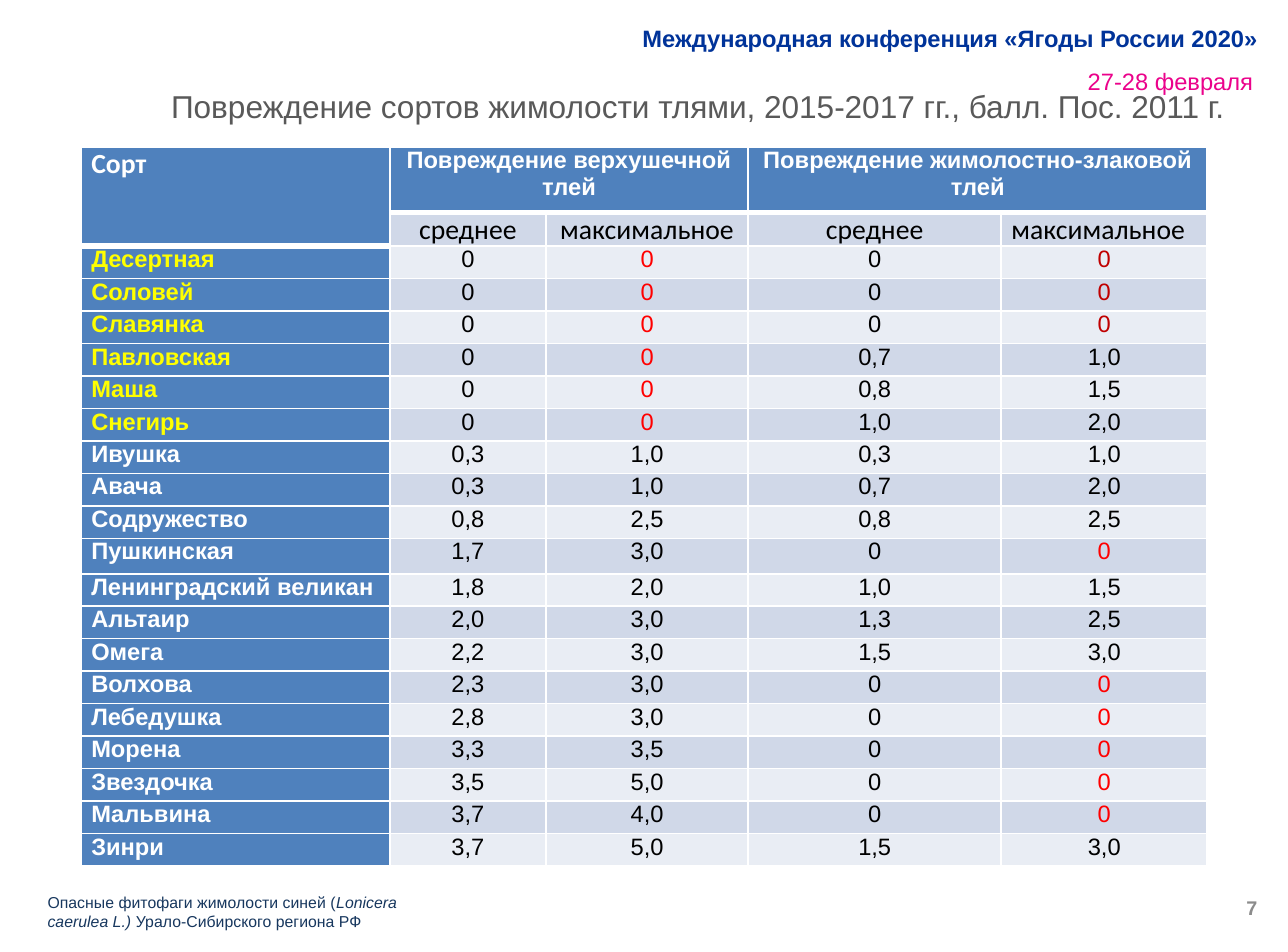
from lxml import etree
from pptx import Presentation
from pptx import util as u
from pptx.dml import color
from pptx.enum import text
from pptx.oxml import ns

HUES = {
    "white": "FFFFFF", "black": "000000", "blue": "4F81BD", "band": "D0D8E8",
    "pale": "E9EDF4", "yellow": "FFFF00", "red": "FF0000", "dark": "C00000",
    "navy": "003399", "pink": "EB028B", "grey": "595959", "ash": "8C8C8C",
    "ink": "17375E",
}
LEFT, MID, RIGHT = text.PP_ALIGN.LEFT, text.PP_ALIGN.CENTER, text.PP_ALIGN.RIGHT
TOP, CORE = text.MSO_ANCHOR.TOP, text.MSO_ANCHOR.MIDDLE

SORTS = """Десертная|0|0|0|0
Соловей|0|0|0|0
Славянка|0|0|0|0
Павловская|0|0|0,7|1,0
Маша|0|0|0,8|1,5
Снегирь|0|0|1,0|2,0
Ивушка|0,3|1,0|0,3|1,0
Авача|0,3|1,0|0,7|2,0
Содружество|0,8|2,5|0,8|2,5
Пушкинская|1,7|3,0|0|0
Ленинградский великан|1,8|2,0|1,0|1,5
Альтаир|2,0|3,0|1,3|2,5
Омега|2,2|3,0|1,5|3,0
Волхова|2,3|3,0|0|0
Лебедушка|2,8|3,0|0|0
Морена|3,3|3,5|0|0
Звездочка|3,5|5,0|0|0
Мальвина|3,7|4,0|0|0
Зинри|3,7|5,0|1,5|3,0"""


def rgb(name):
    return color.RGBColor.from_string(HUES[name])


def style(para, hue, size, bold=False, align=LEFT, face="Arial"):
    para.alignment = align
    font = para.font
    font.name, font.size, font.bold = face, u.Pt(size), bold
    font.color.rgb = rgb(hue)


def label(slide, box, runs, hue, size, bold=False, align=LEFT, anchor=CORE):
    frame = slide.shapes.add_textbox(*map(u.Cm, box)).text_frame
    frame.word_wrap = True
    frame.vertical_anchor = anchor
    frame.margin_left = frame.margin_right = u.Cm(0.21)
    frame.margin_top = frame.margin_bottom = u.Cm(0.1)
    para = frame.paragraphs[0]
    style(para, hue, size, bold, align)
    for words, slant in runs:
        run = para.add_run()
        run.text = words
        if slant:
            run.font.italic = True
    return para


def header(slide, box):
    left, top, width, height = box
    date = label(slide, (left + 7.76, top + 0.71, 4.09, 0.94),
                 [("27-28 февраля", False)], "pink", 12, align=RIGHT, anchor=TOP)
    date.line_spacing = u.Pt(20.4)
    label(slide, (left, top, width, height),
          [("Международная конференция «Ягоды России 2020»", False)],
          "navy", 12, True, RIGHT)


def title(slide, box):
    label(slide, box,
          [("Повреждение сортов жимолости тлями, 2015-2017 гг., балл. Пос. 2011 г.", False)],
          "grey", 16, align=MID)


def footer(slide, box):
    left, top, width, height = box
    label(slide, (left + width - 5.36, top, 5.36, height),
          [("7", False)], "ash", 10, True, RIGHT)
    label(slide, (left, top + 0.07, 7.29, height),
          [("Опасные фитофаги жимолости синей (", False),
           ("Lonicera caerulea L.) ", True),
           ("Урало-Сибирского региона РФ", False)], "ink", 8)


def edges(cell, wide):
    props = cell._tc.get_or_add_tcPr()
    for side in "LRTB":
        line = etree.SubElement(props, ns.qn("a:ln" + side),
                                w=str(u.Pt(3 if side in wide else 1)))
        fill = etree.SubElement(line, ns.qn("a:solidFill"))
        etree.SubElement(fill, ns.qn("a:srgbClr"), val=HUES["white"])


def dress(cell, words, fill, wide="", **look):
    cell.margin_left = cell.margin_right = u.Cm(0.18)
    cell.margin_top = cell.margin_bottom = 0
    edges(cell, wide)
    cell.fill.solid()
    cell.fill.fore_color.rgb = rgb(fill)
    cell.text = words
    style(cell.text_frame.paragraphs[0], **look)


def heads(grid):
    for col, words in enumerate(("Сорт", "Повреждение верхушечной тлей", "",
                                 "Повреждение жимолостно-злаковой тлей", "")):
        first = col == 0
        dress(grid.cell(0, col), words, "blue", "B", hue="white", bold=True,
              size=14 if first else 12, face="Calibri" if first else "Arial",
              align=LEFT if first else MID)
    for col, words in enumerate(("", "среднее", "максимальное",
                                 "среднее", "максимальное")):
        dress(grid.cell(1, col), words, "band" if col else "blue",
              "T" if col else "B", hue="black", size=14, face="Calibri",
              align=LEFT if col == 4 else MID)
    grid.cell(0, 0).merge(grid.cell(1, 0))
    for col in (1, 3):
        grid.cell(0, col).merge(grid.cell(0, col + 1))


def tint(row, col, marks):
    if col == 0:
        return "yellow" if marks[2] == "0" else "white"
    if col in (2, 4) and marks[col] == "0":
        return "dark" if col == 4 and row < 3 else "red"
    return "black"


def scores(slide, box):
    rows = [line.split("|") for line in SORTS.splitlines()]
    grid = slide.shapes.add_table(len(rows) + 2, 5, *map(u.Cm, box)).table
    grid.first_row = grid.horz_banding = False
    for col, width in zip(grid.columns, (5.51, 2.79, 3.61, 4.52, 3.68)):
        col.width = u.Cm(width)
    for row in grid.rows:
        row.height = u.Cm(0.58)
    grid.rows[0].height = u.Cm(1.17)
    grid.rows[11].height = u.Cm(0.63)
    heads(grid)
    for row, marks in enumerate(rows):
        for col, words in enumerate(marks):
            fill = ("band" if row % 2 else "pale") if col else "blue"
            dress(grid.cell(row + 2, col), words, fill,
                  "T" if row == col == 0 else "", hue=tint(row, col, marks),
                  size=12, bold=col == 0, align=MID if col else LEFT)


def main():
    deck = Presentation()
    deck.slide_width, deck.slide_height = u.Cm(23), u.Cm(17)
    slide = deck.slides.add_slide(deck.slide_layouts[6])
    header(slide, (10.74, 0.18, 11.94, 0.99))
    title(slide, (2.41, 1.39, 20.12, 1))
    scores(slide, (1.45, 2.63, 20.11, 12.83))
    footer(slide, (0.64, 15.75, 22.02, 0.91))
    deck.save("out.pptx")


if __name__ == "__main__":
    main()
